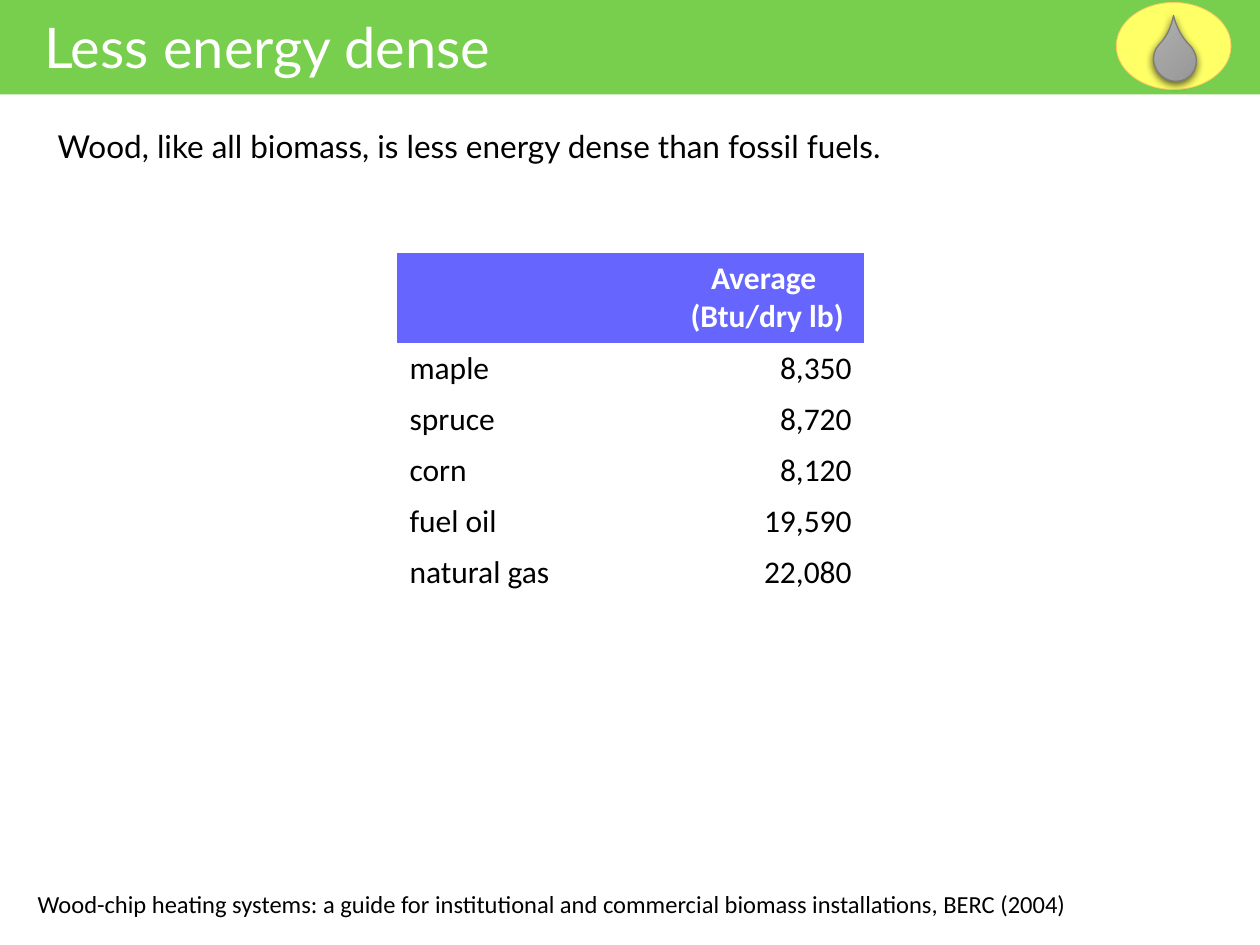
from typing import NamedTuple

import pptx
import pptx.dml.color
import pptx.enum.shapes
import pptx.enum.text
import pptx.oxml
import pptx.oxml.ns
import pptx.util

Inches = pptx.util.Inches
Shape = pptx.enum.shapes.MSO_SHAPE
Align = pptx.enum.text.PP_ALIGN

COLORS = {
    "band": "78CE4D",
    "white": "FFFFFF",
    "black": "000000",
    "header": "6666FF",
    "disc": "FFFF66",
    "disc_edge": "FFCC66",
    "drop_top": "AFAFAF",
    "drop_bottom": "939393",
    "drop_edge": "7C7C7C",
}
NO_TABLE_STYLE = "{2D5ABB26-0587-4C30-8999-92F81FD0307C}"


class Box(NamedTuple):
    left: float
    top: float
    width: float
    height: float

    def lengths(self) -> list:
        return [Inches(value) for value in self]


class Fuel(NamedTuple):
    name: str
    btu_per_dry_lb: int


class Note(NamedTuple):
    text: str
    box: Box
    font: str
    size: int
    line_spacing: float


FUELS = [
    Fuel("maple", 8350),
    Fuel("spruce", 8720),
    Fuel("corn", 8120),
    Fuel("fuel oil", 19590),
    Fuel("natural gas", 22080),
]
NOTES = [
    Note("Wood, like all biomass, is less energy dense than fossil fuels.",
         Box(0.36, 0.9, 8.83, 0.45), "Lato", 18, 1.2),
    Note("Wood-chip heating systems: a guide for institutional and commercial "
         "biomass installations, BERC (2004)",
         Box(0.2, 7.01, 8.89, 0.34), "Calibri", 14, 1.0),
]


def rgb(name: str) -> pptx.dml.color.RGBColor:
    return pptx.dml.color.RGBColor.from_string(COLORS[name])


def format_text(frame, font: str, size: int, color: str, align=Align.LEFT,
                bold: bool = False, line_spacing: float = 1.0) -> None:
    for paragraph in frame.paragraphs:
        paragraph.alignment = align
        paragraph.line_spacing = line_spacing
        for run in paragraph.runs:
            run.font.name = font
            run.font.size = pptx.util.Pt(size)
            run.font.bold = bold
            run.font.color.rgb = rgb(color)


def add_title_band(slide) -> None:
    band = slide.shapes.add_shape(Shape.RECTANGLE, *Box(0, 0, 10.01, 0.75).lengths())
    band.shadow.inherit = False
    band.fill.solid()
    band.fill.fore_color.rgb = rgb("band")
    band.line.fill.background()

    title = slide.shapes.title
    title.left, title.top, title.width, title.height = Box(0.25, 0.05, 4.07, 0.64).lengths()
    frame = title.text_frame
    frame.text = "Less energy dense"
    frame.word_wrap = False
    frame.auto_size = pptx.enum.text.MSO_AUTO_SIZE.NONE
    frame.vertical_anchor = pptx.enum.text.MSO_ANCHOR.TOP
    format_text(frame, "Lato", 32, "white")
    band.element.addnext(title.element)  # the title lies above the band


def add_note(slide, note: Note) -> None:
    frame = slide.shapes.add_textbox(*note.box.lengths()).text_frame
    frame.word_wrap = True
    frame.text = note.text
    format_text(frame, note.font, note.size, "black", line_spacing=note.line_spacing)


def add_drop_icon(slide) -> None:
    icon = slide.shapes.add_group_shape()
    disc = icon.shapes.add_shape(Shape.OVAL, *Box(8.86, 0.02, 0.91, 0.69).lengths())
    disc.shadow.inherit = False
    disc.fill.solid()
    disc.fill.fore_color.rgb = rgb("disc")
    disc.line.color.rgb = rgb("disc_edge")
    disc.line.width = pptx.util.Pt(0.5)

    drop = icon.shapes.add_shape(Shape.TEAR, *Box(9.16, 0.3, 0.33, 0.35).lengths())
    drop.adjustments[0] = 1.465
    drop.rotation = 314.8
    drop.fill.gradient()
    drop.fill.gradient_angle = 270
    for stop, color in zip(drop.fill.gradient_stops, ("drop_top", "drop_bottom")):
        stop.color.rgb = rgb(color)
    drop.line.color.rgb = rgb("drop_edge")
    drop.line.width = pptx.util.Pt(0.75)
    drop.shadow.inherit = False
    effects = drop.element.spPr.find(pptx.oxml.ns.qn("a:effectLst"))
    effects.append(pptx.oxml.parse_xml(
        f'<a:outerShdw {pptx.oxml.ns.nsdecls("a")} blurRad="{pptx.util.Pt(4.5)}" '
        f'dist="{pptx.util.Pt(1.5)}" dir="5400000" algn="ctr" rotWithShape="0">'
        f'<a:srgbClr val="{COLORS["black"]}"><a:alpha val="63000"/></a:srgbClr>'
        "</a:outerShdw>"))


def add_fuel_table(slide, fuels: list[Fuel]) -> None:
    holder = slide.shapes.add_table(len(fuels) + 1, 2, *Box(3.15, 2.01, 3.71, 2.5).lengths())
    holder.element.find(".//" + pptx.oxml.ns.qn("a:tableStyleId")).text = NO_TABLE_STYLE
    table = holder.table
    table.horz_banding = False
    for column, width in zip(table.columns, (2.17, 1.54)):
        column.width = Inches(width)
    for index, row in enumerate(table.rows):
        row.height = Inches(0.37 if index else 0.65)

    for cell in table.rows[0].cells:
        cell.fill.solid()
        cell.fill.fore_color.rgb = rgb("header")
    heading = table.cell(0, 1).text_frame
    heading.text = "Average \n(Btu/dry lb)"
    format_text(heading, "Calibri", 18, "white", Align.CENTER, bold=True)

    for index, fuel in enumerate(fuels, start=1):
        entries = ((fuel.name, Align.LEFT), (f"{fuel.btu_per_dry_lb:,}", Align.RIGHT))
        for cell, (text, align) in zip(table.rows[index].cells, entries):
            cell.fill.background()
            cell.text_frame.text = text
            format_text(cell.text_frame, "Calibri", 18, "black", align)


def main() -> None:
    deck = pptx.Presentation()
    deck.slide_width, deck.slide_height = Inches(10), Inches(7.5)
    slide = deck.slides.add_slide(deck.slide_layouts.get_by_name("Title Only"))
    add_title_band(slide)
    add_drop_icon(slide)
    add_fuel_table(slide, FUELS)
    for note in NOTES:
        add_note(slide, note)
    deck.save("out.pptx")


if __name__ == "__main__":
    main()
